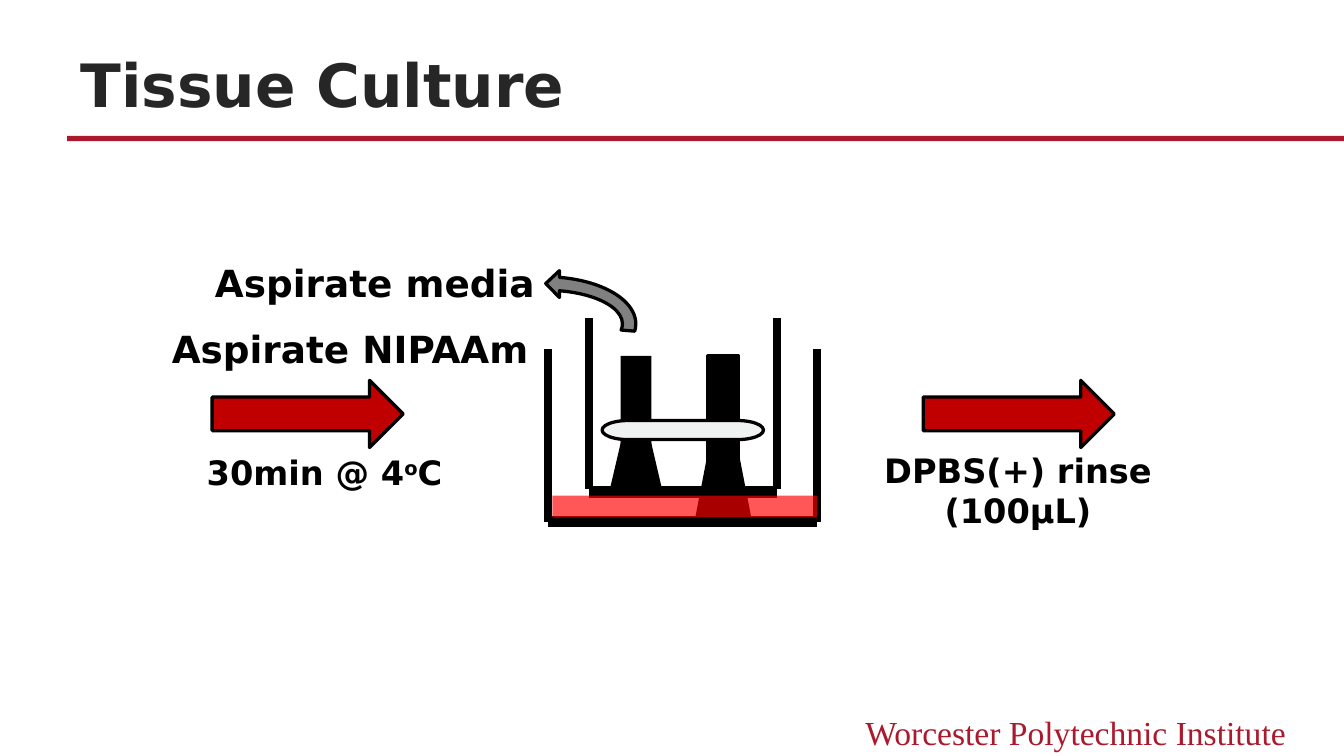
from lxml import etree
from pptx import Presentation
from pptx.dml.color import RGBColor
from pptx.enum.shapes import MSO_CONNECTOR as Connector, MSO_SHAPE as Shape
from pptx.enum.text import MSO_ANCHOR as Anchor, PP_ALIGN as Align
from pptx.oxml.ns import qn
from pptx.util import Cm, Pt

CRIMSON = RGBColor(0xAB, 0x19, 0x2D)
ARROW_RED = RGBColor(0xC0, 0x00, 0x00)
MEDIA_RED = RGBColor(0xFF, 0x00, 0x00)
BLACK = RGBColor(0x00, 0x00, 0x00)
CHARCOAL = RGBColor(0x26, 0x26, 0x26)
GRAY = RGBColor(0x80, 0x80, 0x80)
PALE = RGBColor(0xF0, 0xF1, 0xF1)


class SlideBuilder:
    font = "DejaVu Sans"
    outline = Pt(1.75)

    def __init__(self, page):
        self.page = page

    def text(self, left, top, width, height, parts, size=18, align=Align.RIGHT,
             color=BLACK, font=font, bold=True, anchor=Anchor.TOP):
        box = self.page.shapes.add_textbox(Cm(left), Cm(top), Cm(width), Cm(height))
        frame = box.text_frame
        frame.word_wrap = True
        frame.vertical_anchor = anchor
        para = frame.paragraphs[0]
        para.alignment = align
        for part in parts:
            span = para.add_run()
            span.text = part
            span.font.name = font
            span.font.size = Pt(size)
            span.font.bold = bold
            span.font.color.rgb = color
        return para

    def shape(self, kind, left, top, width, height, fill, outlined=True):
        shape = self.page.shapes.add_shape(kind, Cm(left), Cm(top), Cm(width), Cm(height))
        shape.shadow.inherit = False
        shape.fill.solid()
        shape.fill.fore_color.rgb = fill
        if outlined:
            shape.line.color.rgb = BLACK
            shape.line.width = self.outline
        else:
            shape.line.fill.background()
        return shape

    def line(self, x1, y1, x2, y2, width):
        line = self.page.shapes.add_connector(
            Connector.STRAIGHT, Cm(x1), Cm(y1), Cm(x2), Cm(y2))
        line.line.color.rgb = BLACK
        line.line.width = Pt(width)
        etree.SubElement(line._element.spPr, qn("a:effectLst"))

    def vessel(self, left, right, top, wall_bottom, base):
        self.line(left, top, left, wall_bottom, 4.5)
        self.line(right, base, left, base, 6)
        self.line(right, wall_bottom, right, top, 4.5)

    def post(self, left, foot_top, foot_height, stem_height, outlined):
        self.shape(Shape.TRAPEZOID, left, foot_top, 1.02, foot_height, BLACK, outlined)
        self.shape(Shape.RECTANGLE, left + 0.22, 6.73, 0.58, stem_height, BLACK, outlined)

    def curved_arrow(self, left, top, width, height):
        arrow = self.shape(Shape.CIRCULAR_ARROW, left, top, width, height, GRAY)
        for index, value in enumerate((0.125, 11.423, 204.577, 159.152, 0.125)):
            arrow.adjustments[index] = value
        arrow.rotation = 90
        arrow._element.spPr.find(qn("a:xfrm")).set("flipH", "1")

    def liquid(self, left, top, width, height):
        liquid = self.shape(Shape.RECTANGLE, left, top, width, height, MEDIA_RED, False)
        color = liquid._element.spPr.find(qn("a:solidFill"))[0]
        etree.SubElement(color, qn("a:alpha")).set("val", "66000")


def main():
    deck = Presentation()
    deck.slide_width, deck.slide_height = Cm(25.4), Cm(14.29)
    slide = SlideBuilder(deck.slides.add_slide(deck.slide_layouts[6]))

    slide.shape(Shape.RECTANGLE, 1.27, 2.57, 24.13, 0.1, CRIMSON, False)
    slide.text(15.24, 13.34, 9.32, 1.03, ["Worcester Polytechnic Institute"],
               color=CRIMSON, font="Times New Roman", bold=False)
    slide.text(1.27, 0.71, 22.86, 1.68, ["Tissue Culture"], 32, Align.LEFT,
               CHARCOAL, anchor=Anchor.BOTTOM)

    for left in (4.01, 17.45):
        slide.shape(Shape.RIGHT_ARROW, left, 7.19, 3.61, 1.27, ARROW_RED)
    step = slide.text(0.99, 8.41, 7.62, 1.03, ["30min @ 4", "o", "C"])
    step.runs[1].font._element.set("baseline", "30000")
    slide.text(15.85, 8.38, 6.78, 1.8, ["DPBS(+) rinse (100μL)"], align=Align.CENTER)

    slide.text(1.19, 4.8, 9.17, 1.11, ["Aspirate media"], 20)
    slide.post(13.16, 8.53, 1.32, 2.24, True)
    slide.vessel(10.36, 15.44, 6.6, 9.86, 9.86)
    slide.post(11.51, 8.23, 1.09, 1.83, False)
    slide.vessel(11.13, 14.68, 6.02, 9.25, 9.3)
    slide.shape(Shape.FLOWCHART_TERMINATOR, 11.38, 7.95, 3.05, 0.36, PALE)
    slide.curved_arrow(9.3, 4.29, 2.03, 3.66)
    slide.text(1.07, 6.05, 9.17, 1.11, ["Aspirate NIPAAm"], 20)
    slide.liquid(10.44, 9.37, 5, 0.41)

    deck.save("out.pptx")


if __name__ == "__main__":
    main()
